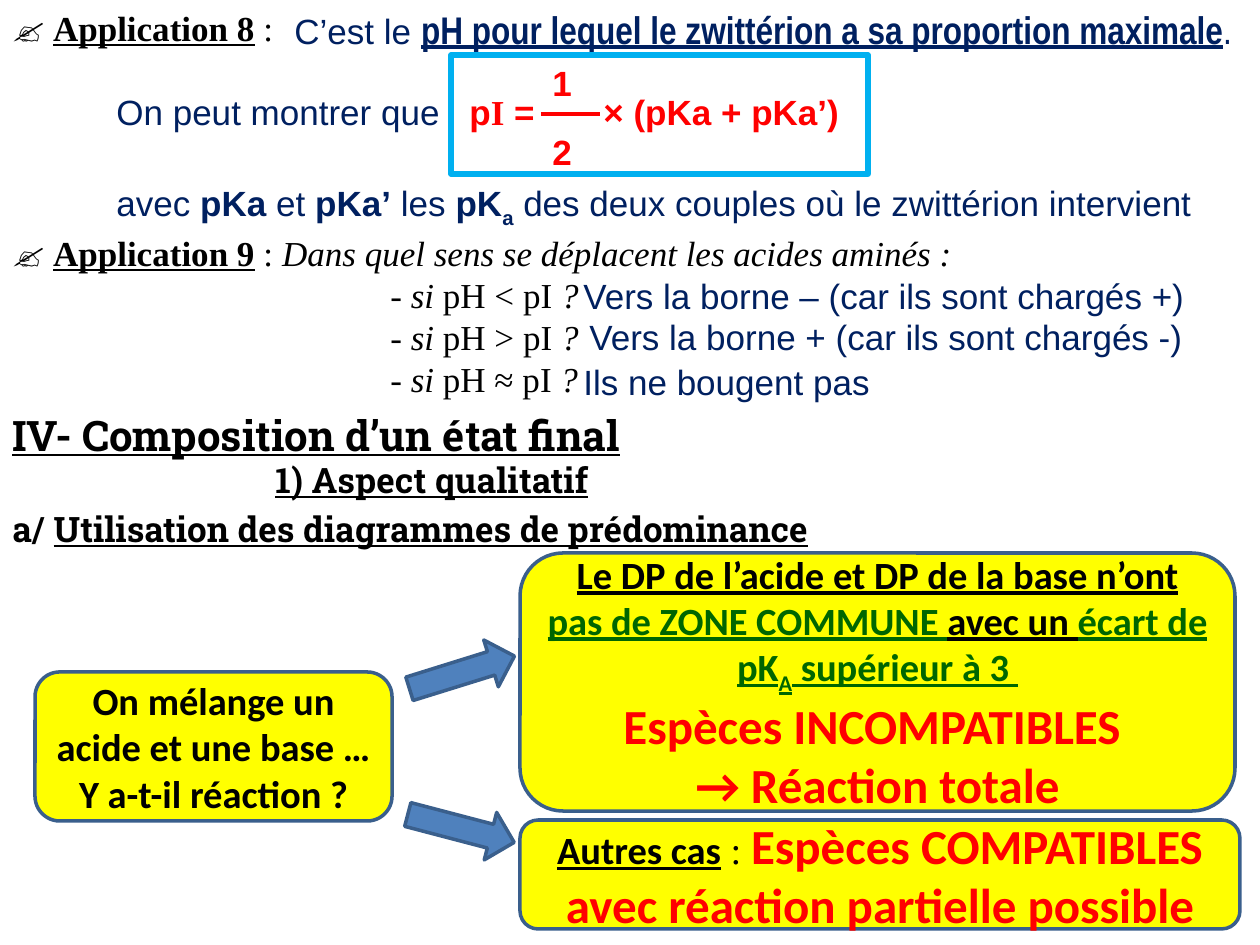
from lxml.etree import SubElement
from pptx import Presentation
from pptx.dml.color import RGBColor
from pptx.enum.shapes import MSO_CONNECTOR, MSO_SHAPE
from pptx.enum.text import MSO_ANCHOR, PP_ALIGN
from pptx.oxml.ns import qn
from pptx.util import Pt

PX = 914400 / 126
NAVY = RGBColor(0x00, 0x20, 0x60)
RED = RGBColor(0xFF, 0x00, 0x00)
BLACK = RGBColor(0x00, 0x00, 0x00)
GREEN = RGBColor(0x00, 0x66, 0x00)
YELLOW = RGBColor(0xFF, 0xFF, 0x00)
SKY = RGBColor(0x00, 0xB0, 0xF0)
BLUE = RGBColor(0x4F, 0x81, 0xBD)
OUTLINE = RGBColor(0x3A, 0x5F, 0x8C)
ARIAL, NARROW, TIMES = "Arial", "Arial Narrow", "Times New Roman"
SLAB, CALIBRI = "Roboto Slab", "Calibri"


def px(*lengths):
    return [round(length * PX) for length in lengths]


def write(frame, paragraphs, font, size, color, align=PP_ALIGN.LEFT):
    for index, runs in enumerate(paragraphs):
        paragraph = frame.add_paragraph() if index else frame.paragraphs[0]
        paragraph.alignment = align
        for text, style, *changes in runs:
            run = paragraph.add_run()
            run.text = text
            run.font.name = font
            run.font.size = Pt(size)
            run.font.color.rgb = color
            run.font.bold = "b" in style
            run.font.italic = "i" in style
            run.font.underline = "u" in style
            if "s" in style:
                run._r.get_or_add_rPr().set("baseline", "-25000")
            for change in changes:
                if isinstance(change, RGBColor):
                    run.font.color.rgb = change
                elif isinstance(change, str):
                    run.font.name = change
                else:
                    run.font.size = Pt(change)


presentation = Presentation()
presentation.slide_width, presentation.slide_height = px(1260, 945)
slide = presentation.slides.add_slide(presentation.slide_layouts[6])
shapes = slide.shapes

texts = [
    (282, 0, 965, 59, ARIAL, 20, NAVY, [
        ("C’est le ", ""),
        ("pH pour lequel le zwittérion a sa proportion maximale", "bu", NARROW, 22),
        (".", "", NARROW, 22)]),
    (104, 84, 350, 55, ARIAL, 20, NAVY, [("On peut montrer que", "")]),
    (457, 84, 93, 55, ARIAL, 20, RED, [("p", "b"), ("I", "b", TIMES), (" =", "b")]),
    (540, 55, 45, 55, ARIAL, 20, RED, [("1", "b")]),
    (540, 124, 45, 55, ARIAL, 20, RED, [("2", "b")]),
    (591, 84, 261, 55, ARIAL, 20, RED, [("× (pKa + pKa’)", "b")]),
    (104, 175, 1120, 55, ARIAL, 20, NAVY, [
        ("avec ", ""), ("pKa", "b"), (" et ", ""), ("pKa’", "b"), (" les ", ""),
        ("pK", "b"), ("a", "bs"),
        (" des deux couples où le zwittérion intervient", "")]),
    (0, 0, 290, 55, TIMES, 20, BLACK, [
        ("✍ ", "b"), ("Application 8", "bu"), ("\u00a0:", "")]),
    (0, 225, 1002, 55, TIMES, 20, BLACK, [
        ("✍ ", "b"), ("Application 9", "bu"), ("\u00a0: ", ""),
        ("Dans quel sens se déplacent les acides aminés\u00a0:", "i")]),
    (571, 268, 640, 55, ARIAL, 20, NAVY,
     [("Vers la borne – (car ils sont chargés +)", "")]),
    (577, 309, 640, 55, ARIAL, 20, NAVY,
     [("Vers la borne + (car ils sont chargés -)", "")]),
    (571, 354, 314, 55, ARIAL, 20, NAVY, [("Ils ne bougent pas", "")]),
    (0, 403, 711, 63, SLAB, 24, BLACK, [("IV- Composition d’un état final", "bu")]),
    (263, 452, 378, 55, SLAB, 20, BLACK, [("1) Aspect qualitatif", "bu")]),
    (0, 501, 910, 55, SLAB, 20, BLACK, [
        ("a/ ", "b"), ("Utilisation des diagrammes de prédominance", "bu")]),
]
for row, relation in enumerate(("pH < pI", "pH > pI", "pH ≈ pI")):
    texts.append((378, 267 + 42 * row, 225, 55, TIMES, 20, BLACK, [
        ("- si ", "i"), (relation, ""), ("\u00a0?", "i")]))

for left, top, width, height, font, size, color, runs in texts:
    text_box = shapes.add_textbox(*px(left, top, width, height))
    text_box.text_frame.word_wrap = False
    write(text_box.text_frame, [runs], font, size, color)

fraction_bar = shapes.add_connector(MSO_CONNECTOR.STRAIGHT, *px(541, 114, 600, 114))
fraction_bar.line.color.rgb = RED
fraction_bar.line.width = Pt(2.25)
SubElement(fraction_bar._element.spPr, qn("a:effectLst"))

formula_frame = shapes.add_shape(MSO_SHAPE.RECTANGLE, *px(451, 55, 417, 119))
formula_frame.shadow.inherit = False
formula_frame.fill.background()
formula_frame.line.color.rgb = SKY
formula_frame.line.width = Pt(3)

for left, top, rotation in ((407, 648, 342.7), (406, 804, 14.7)):
    arrow = shapes.add_shape(MSO_SHAPE.RIGHT_ARROW, *px(left, top, 110, 49))
    arrow.rotation = rotation
    arrow.shadow.inherit = False
    arrow.fill.solid()
    arrow.fill.fore_color.rgb = BLUE
    arrow.line.color.rgb = OUTLINE
    arrow.line.width = Pt(2)

cards = [
    (35, 672, 357, 149, [
        [("On mélange un acide et une base …", "b")],
        [("Y a-t-il réaction ?", "b")]]),
    (520, 820, 720, 109, [
        [("Autres cas", "bu"), (" : ", "", TIMES),
         ("Espèces COMPATIBLES avec réaction partielle possible", "b", RED, 28)]]),
    (520, 553, 715, 258, [
        [("Le DP de l’acide et DP de la base n’ont ", "bu"),
         ("pas de ZONE COMMUNE ", "bu", GREEN), ("avec un ", "bu"),
         ("écart de pK", "bu", GREEN), ("A", "bus", GREEN),
         (" supérieur à 3 ", "bu", GREEN)],
        [("Espèces INCOMPATIBLES ", "b", RED, 28)],
        [("→ Réaction totale", "b", RED, 28)]]),
]
for left, top, width, height, paragraphs in cards:
    card = shapes.add_shape(MSO_SHAPE.ROUNDED_RECTANGLE, *px(left, top, width, height))
    card.shadow.inherit = False
    card.fill.solid()
    card.fill.fore_color.rgb = YELLOW
    card.line.color.rgb = OUTLINE
    card.line.width = Pt(2)
    card.text_frame.word_wrap = True
    card.text_frame.vertical_anchor = MSO_ANCHOR.MIDDLE
    write(card.text_frame, paragraphs, CALIBRI, 22, BLACK, PP_ALIGN.CENTER)

presentation.save("out.pptx")
